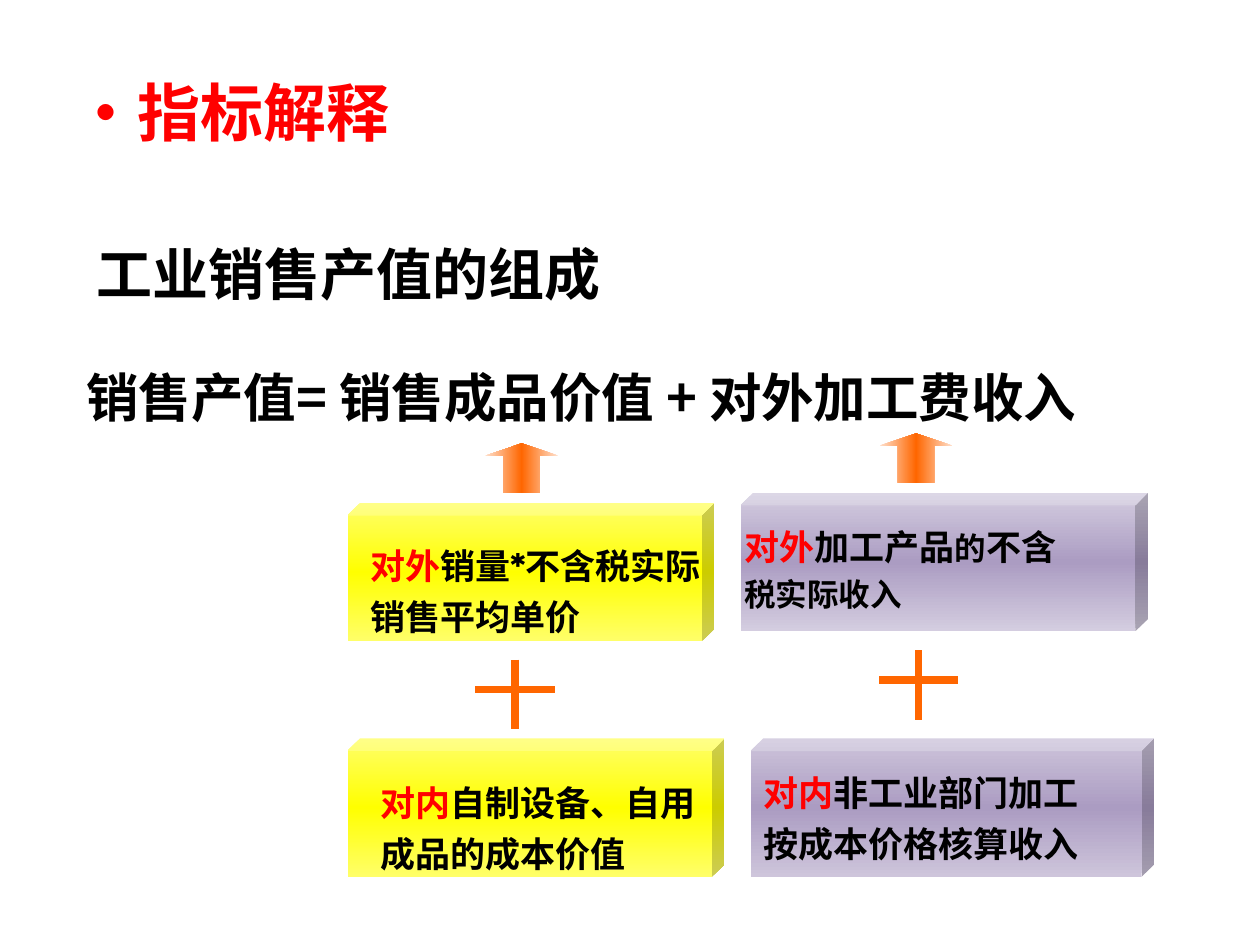
from copy import deepcopy

from lxml.etree import SubElement
from pptx import Presentation
from pptx.dml.color import RGBColor
from pptx.enum.shapes import MSO_CONNECTOR as Link, MSO_SHAPE as Kind
from pptx.enum.text import MSO_ANCHOR as Anchor, MSO_AUTO_SIZE as Fit, PP_ALIGN as Align
from pptx.oxml.ns import qn
from pptx.util import Pt

NOTO, MONT, CALI = "Noto Sans CJK SC", "Montserrat", "Calibri"
RED, BLACK, ORANGE = "FF0000", "000000", "FF6600"
YELLOW = ("FFFF69", "FFFF00")
PURPLE = ("D4CDE0", "AB9CC2")
MAUVE = ("CEC5DB", "AB9CC2")
FLAME = ("FFE1CD", ORANGE)


def rgb(code):
    return RGBColor.from_string(code)


def apply(item, values):
    for name, value in values.items():
        setattr(item, name, value)


class Page:
    frame = dict(margin_left=Pt(7.2), margin_right=0, margin_top=Pt(3.6),
                 margin_bottom=Pt(3.6), word_wrap=True, auto_size=Fit.NONE)
    para = dict(alignment=Align.LEFT, space_before=Pt(0), space_after=Pt(0))

    def __init__(self, slide):
        self.slide = slide

    def place(self, item, box):
        names = ("left", "top", "width", "height")
        apply(item, dict(zip(names, map(Pt, box))))

    def letter(self, item, lines, pitch, anchor=Anchor.MIDDLE):
        """Fill item with lines, each a list of (text, size, font, colour)."""
        frame = item.text_frame
        apply(frame, {**self.frame, "vertical_anchor": anchor})
        for i, line in enumerate(lines):
            para = frame.add_paragraph() if i else frame.paragraphs[0]
            apply(para, {**self.para, "line_spacing": Pt(pitch)})
            for text, size, font, color in line:
                run = para.add_run()
                run.text = text
                apply(run.font, dict(size=Pt(size), name=font, bold=True))
                run.font.color.rgb = rgb(color)
                SubElement(run._r.get_or_add_rPr(), qn("a:ea"), typeface=NOTO)

    def holder(self, item, box, lines, pitch):
        self.place(item, box)
        self.letter(item, lines, pitch)
        for para in item.text_frame.paragraphs:
            props = para._p.get_or_add_pPr()
            props.set("marL", "0")
            props.set("indent", "0")
            SubElement(props, qn("a:buNone"))

    def label(self, box, lines, pitch, anchor=Anchor.MIDDLE):
        item = self.slide.shapes.add_textbox(*map(Pt, box))
        self.letter(item, lines, pitch, anchor)

    def shape(self, kind, box, tones, angle, adjust):
        """Add a shape shaded from the edge tone to the core tone and back."""
        item = self.slide.shapes.add_shape(kind, *map(Pt, box))
        item.shadow.inherit = False
        item.line.fill.background()
        for i, value in enumerate(adjust):
            item.adjustments[i] = value
        item.fill.gradient()
        item.fill.gradient_angle = angle
        stops = item._element.spPr.find(qn("a:gradFill")).find(qn("a:gsLst"))
        stops.append(deepcopy(stops[0]))
        edge, core = tones
        for stop, tone, spot in zip(item.fill.gradient_stops, (edge, core, edge), (0, 0.5, 1)):
            stop.color.rgb = rgb(tone)
            stop.position = spot
        return item

    def cube(self, box, tones):
        return self.shape(Kind.CUBE, box, tones, 90, [0.09])

    def arrow(self, left, top):
        self.shape(Kind.UP_ARROW, (left, top, 41.8, 28.1), FLAME, 0, [0.5, 0.25])

    def line(self, *ends):
        item = self.slide.shapes.add_connector(Link.STRAIGHT, *map(Pt, ends))
        item.line.width = Pt(4.25)
        item.line.color.rgb = rgb(ORANGE)
        SubElement(item._element.spPr, qn("a:effectLst"))

    def plus(self, x, y):
        self.line(x - 22.7, y, x + 22.7, y)
        self.line(x, y - 17, x, y + 22.7)


def pair(lead, rest, last):
    """Two lines, the first opening with a red lead word."""
    return [[(lead, 20, MONT, RED), (rest, 20, MONT, BLACK)], [(last, 20, MONT, BLACK)]]


def main():
    deck = Presentation()
    deck.slide_width, deck.slide_height = Pt(720), Pt(540)
    page = Page(deck.slides.add_slide(deck.slide_layouts[1]))
    title, body = page.slide.placeholders

    page.holder(title, (35.3, 36.7, 767.5, 51.1), [[("·指标解释", 36, NOTO, RED)]], 46)
    page.label((48.2, 111.6, 472.3, 65.5), [[("工业销售产值的组成", 32, NOTO, BLACK)]], 60, Anchor.TOP)
    formula = " 销售产值= 销售成品价值 + 对外加工费收入"
    page.holder(body, (35.3, 198, 658, 49.7), [[(formula, 30, NOTO, BLACK)]], 44)

    page.cube((198.7, 287.3, 209.5, 79.2), YELLOW)
    page.cube((198.7, 421.9, 215.3, 79.2), YELLOW)
    page.cube((423.4, 281.5, 232.6, 79.2), PURPLE)
    inner = page.cube((429.1, 421.9, 230.4, 79.2), MAUVE)

    page.label((204.5, 309.6, 208.8, 51.1), pair("对外", "销量*不含税实际", "销售平均单价"), 29)
    page.label((210.2, 445, 193, 51.1), pair("对内", "自制设备、自用", "成品的成本价值"), 29)
    page.letter(inner, pair("对内", "非工业部门加工", "按成本价格核算收入"), 29)
    fees = [[("对外", 20, MONT, RED), ("加工产品", 20, MONT, BLACK),
             ("的", 18, CALI, BLACK), ("不含", 20, MONT, BLACK)],
            [("税实际收入", 18, CALI, BLACK)]]
    page.label((418.3, 293, 238.3, 62.6), fees, 26)

    for x, y in ((277.2, 253.4), (502.6, 247.7)):
        page.arrow(x, y)
    for x, y in ((294.3, 394), (525, 388.6)):
        page.plus(x, y)

    deck.save("out.pptx")


if __name__ == "__main__":
    main()
